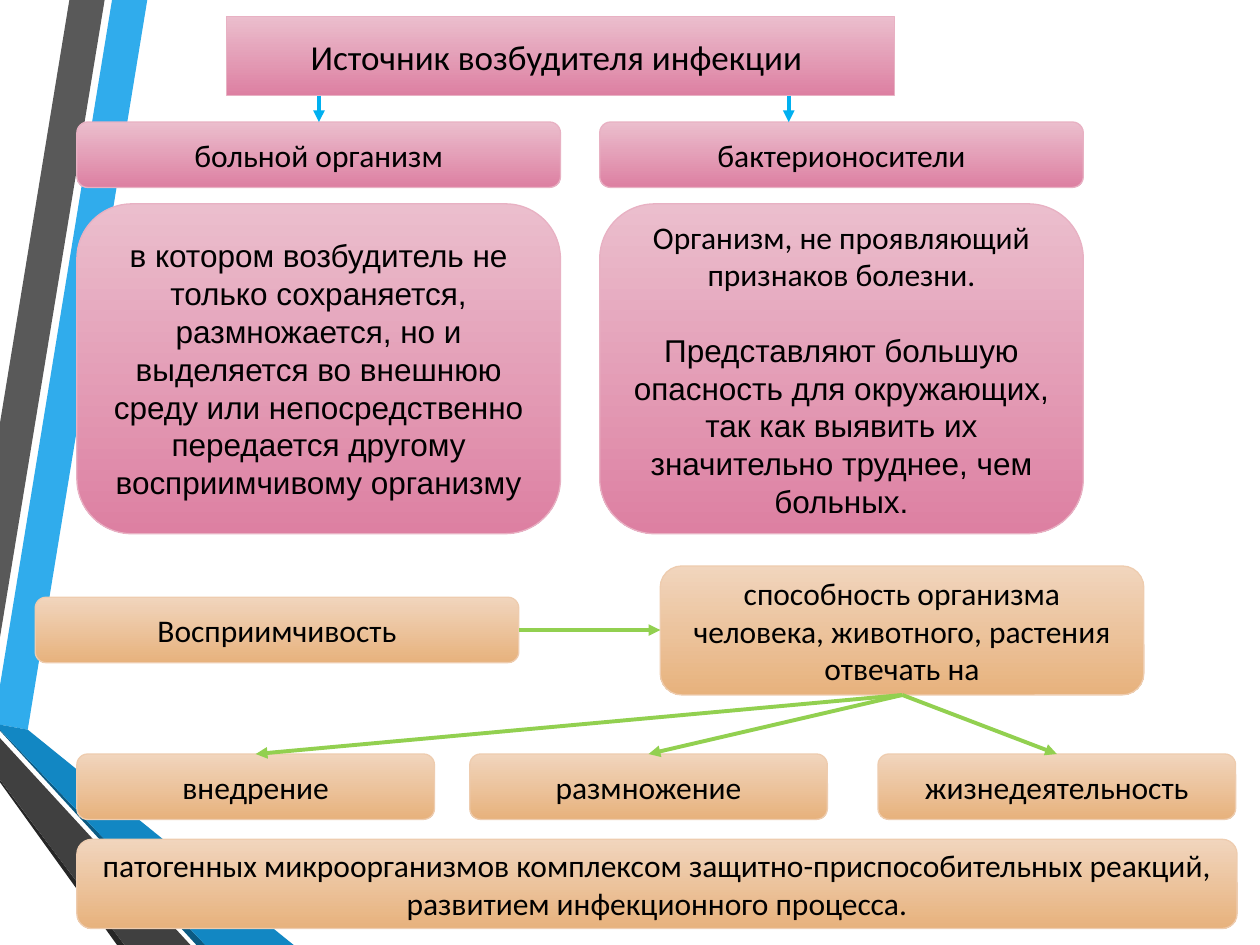
import pptx
import pptx.util
import pptx.dml.color
import pptx.enum.shapes
import pptx.enum.text
import pptx.oxml.ns
import lxml.etree

Cm = pptx.util.Cm
qn = pptx.oxml.ns.qn


def color(code):
    return pptx.dml.color.RGBColor.from_string(code)


def dress(box, paragraphs, palette, size=18):
    top_color, bottom_color, edge_color = palette
    box.fill.gradient()
    box.fill.gradient_angle = 270
    for stop, code in zip(box.fill.gradient_stops, (top_color, bottom_color)):
        stop.color.rgb = color(code)
    box.line.color.rgb = color(edge_color)
    box.line.width = pptx.util.Pt(0.75)
    frame = box.text_frame
    frame_format = {
        "word_wrap": True,
        "auto_size": pptx.enum.text.MSO_AUTO_SIZE.NONE,
        "vertical_anchor": pptx.enum.text.MSO_ANCHOR.MIDDLE,
    }
    for name, value in frame_format.items():
        setattr(frame, name, value)
    for index, (text, font_name) in enumerate(paragraphs):
        para = frame.add_paragraph() if index else frame.paragraphs[0]
        para.alignment = pptx.enum.text.PP_ALIGN.CENTER
        para.space_before = pptx.util.Pt(21.5 if index else 0)
        span = para.add_run()
        span.text = text
        for name, value in {"name": font_name, "size": pptx.util.Pt(size)}.items():
            setattr(span.font, name, value)
        span.font.color.rgb = color("000000")


deck = pptx.Presentation()
deck.slide_width = Cm(25.4)
deck.slide_height = Cm(19.05)
page = deck.slides.add_slide(deck.slide_layouts[5])

PINK = ("EBBECD", "DD80A2", "E8B1C3")
ORANGE = ("F1D5BD", "E7B27D", "EECCAF")
BLUE_ARROW, GREEN_ARROW = "00B0F0", "92D050"

ribbons = [
    ("30ACEC", [(0, 13.82), (0, 14.61), (0.56, 14.71), (2.97, 0), (2.26, 0)]),
    ("595959", [(2.11, 0), (1.4, 0), (0, 8.53), (0, 12.85)]),
    ("262626", [(0, 15.72), (0, 15.77), (2.36, 19.05), (2.51, 19.05)]),
    ("0C5A82", [(0, 14.71), (0, 14.73), (3.96, 19.05), (4.14, 19.05)]),
    ("1287C3", [(0, 14.71), (4.14, 19.05), (5.92, 19.05), (0.56, 14.71), (0, 14.61)]),
    ("404040", [(0, 15.72), (2.51, 19.05), (3.84, 19.05), (0, 14.88)]),
]
for code, corners in ribbons:
    points = [(Cm(x), Cm(y)) for x, y in corners]
    outline = page.shapes.build_freeform(*points[0], scale=1.0)
    outline.add_line_segments(points[1:], close=True)
    ribbon = outline.convert_to_shape()
    ribbon.shadow.inherit = False
    ribbon.fill.solid()
    ribbon.fill.fore_color.rgb = color(code)
    ribbon.line.fill.background()

title = page.shapes.title
title_place = {"left": 4.57, "top": 0.33, "width": 13.46, "height": 1.6}
for name, value in title_place.items():
    setattr(title, name, Cm(value))
geometry = lxml.etree.SubElement(title.element.spPr, qn("a:prstGeom"), prst="roundRect")
lxml.etree.SubElement(geometry, qn("a:avLst"))
dress(title, [("Источник возбудителя инфекции ", "Calibri")], PINK, 20)

left, right = 1.55, 12.09
wide, low = 9.75, 1.32
reaction_width, reaction_top = 7.21, 15.2
reactions = [(1.55, "внедрение"), (9.47, "размножение"), (17.7, "жизнедеятельность")]

boxes = [
    (left, 2.46, wide, low, PINK, [("больной организм", "Calibri")]),
    (right, 2.46, wide, low, PINK, [("бактерионосители", "Calibri")]),
    (left, 4.11, wide, 6.65, PINK, [
        ("в котором возбудитель не только сохраняется, размножается, но и "
         "выделяется во внешнюю среду или непосредственно передается другому "
         "восприимчивому организму", "Arial"),
    ]),
    (right, 4.11, wide, 6.65, PINK, [
        ("Организм, не проявляющий признаков болезни.", "Calibri"),
        ("Представляют большую опасность для окружающих, так как выявить их "
         "значительно труднее, чем больных.", "Arial"),
    ]),
    (0.71, 12.04, wide, low, ORANGE, [("Восприимчивость", "Calibri")]),
    (13.31, 11.41, wide, 2.6, ORANGE, [
        ("способность организма человека, животного, растения отвечать на", "Calibri"),
    ]),
    (left, 16.92, 23.39, 1.8, ORANGE, [
        ("патогенных микроорганизмов комплексом защитно-приспособительных "
         "реакций, развитием инфекционного процесса.", "Calibri"),
    ]),
]
for x, text in reactions:
    boxes.append((x, reaction_top, reaction_width, low, ORANGE, [(text, "Calibri")]))

for x, y, width, height, palette, paragraphs in boxes:
    box = page.shapes.add_shape(
        pptx.enum.shapes.MSO_SHAPE.ROUNDED_RECTANGLE, Cm(x), Cm(y), Cm(width), Cm(height))
    box.shadow.inherit = False
    dress(box, paragraphs, palette)

arrows = [(x, 1.93, x, 2.46, BLUE_ARROW) for x in (6.43, 15.9)]
arrows.append((10.46, 12.7, 13.31, 12.7, GREEN_ARROW))
for x, text in reactions:
    arrows.append((18.19, 14.01, x + reaction_width / 2, reaction_top, GREEN_ARROW))

for x1, y1, x2, y2, code in arrows:
    arrow = page.shapes.add_connector(
        pptx.enum.shapes.MSO_CONNECTOR.STRAIGHT, Cm(x1), Cm(y1), Cm(x2), Cm(y2))
    arrow.line.color.rgb = color(code)
    arrow.line.width = pptx.util.Pt(2.25)
    lxml.etree.SubElement(arrow.line._get_or_add_ln(), qn("a:tailEnd"), type="triangle")
    lxml.etree.SubElement(arrow.element.spPr, qn("a:effectLst"))

deck.save("out.pptx")
